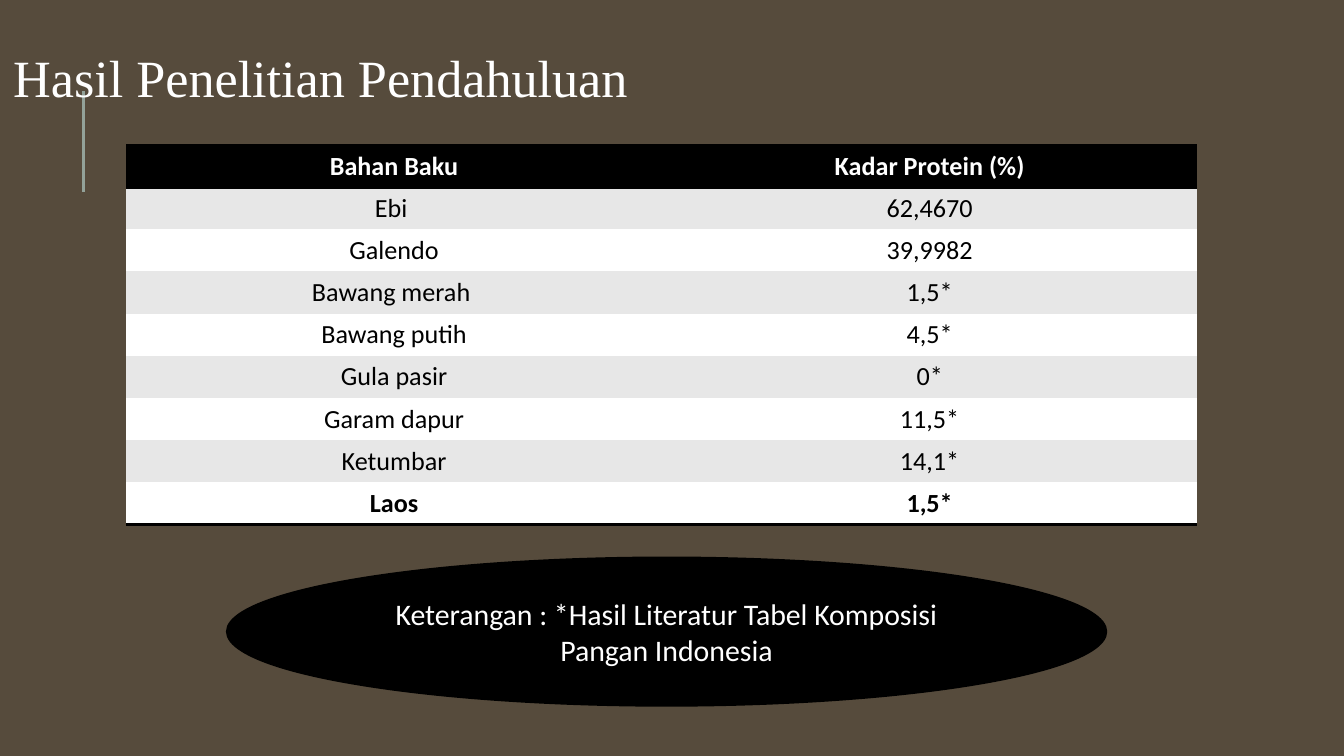
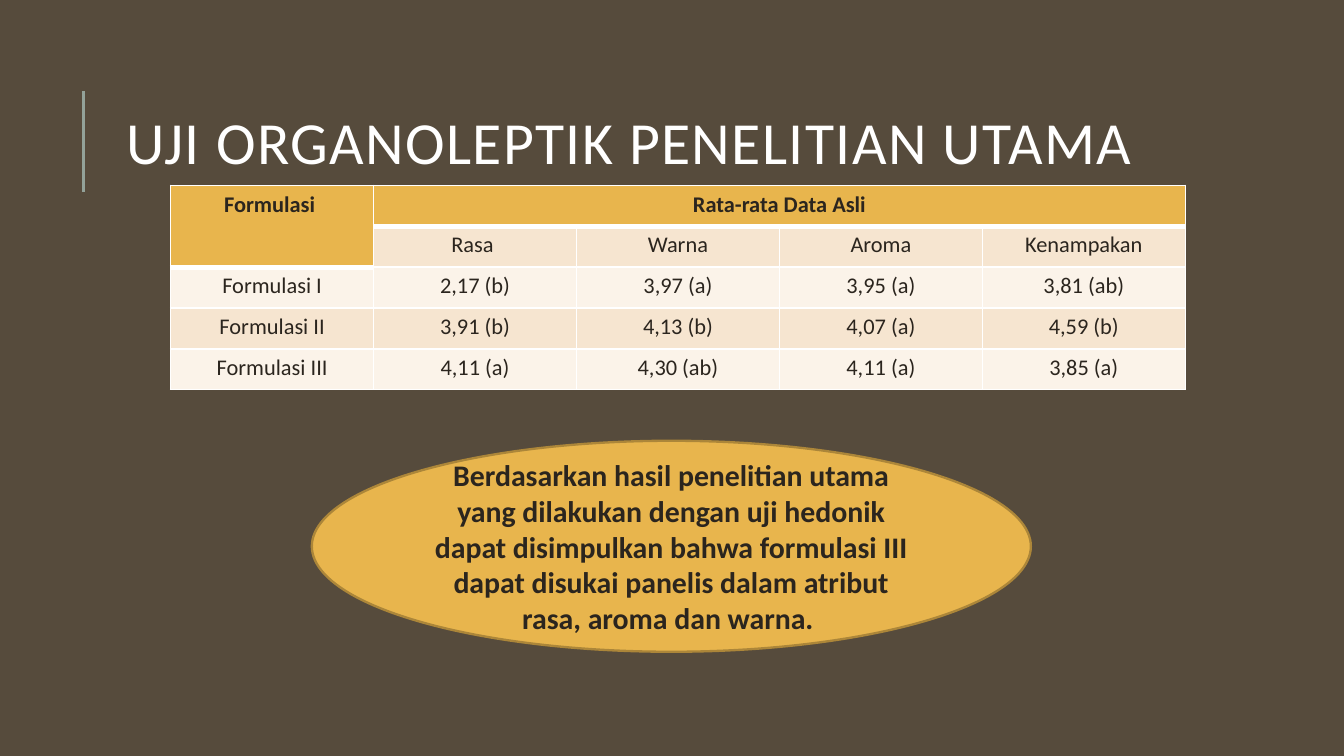
from dataclasses import dataclass

from lxml import etree
from pptx import Presentation
from pptx.dml.color import RGBColor
from pptx.enum.shapes import MSO_CONNECTOR, MSO_SHAPE
from pptx.enum.text import MSO_ANCHOR, PP_ALIGN
from pptx.oxml.ns import qn
from pptx.slide import Slide
from pptx.table import _Cell
from pptx.util import Inches, Pt

STRAIGHT = MSO_CONNECTOR.STRAIGHT
ELLIPSE = MSO_SHAPE.OVAL
CENTER = PP_ALIGN.CENTER
MIDDLE = MSO_ANCHOR.MIDDLE

BACKGROUND, RULE = "564B3C", "93A299"
BLACK, WHITE, GOLD, DARK = "000000", "FFFFFF", "E8B54D", "2B251E"
BODY_FONT = "Calibri"
PLAIN_TABLE_STYLE = "{2D5ABB26-0587-4C30-8999-92F81FD0307C}"

Box = tuple[float, float, float, float]


@dataclass
class TextStyle:
    size: float
    color: str
    bold: bool = False
    font: str = BODY_FONT
    spacing: float = 0


@dataclass
class Title:
    text: str
    box: Box
    style: TextStyle


@dataclass
class TableLook:
    header_fill: str
    bands: tuple[str, str]
    header_text: TextStyle
    body_text: TextStyle
    side_margin: float


@dataclass
class Note:
    text: str
    box: Box
    fill: str
    line: str
    style: TextStyle


PROTEIN_ROWS = [
    ["Bahan Baku", "Kadar Protein (%)"],
    ["Ebi ", "62,4670"],
    ["Galendo", "39,9982"],
    ["Bawang merah ", "1,5*"],
    ["Bawang putih", "4,5*"],
    ["Gula pasir", "0*"],
    ["Garam dapur", "11,5*"],
    ["Ketumbar", "14,1*"],
    ["Laos", "1,5*"],
]
PROTEIN_LOOK = TableLook(BLACK, ("E7E7E7", WHITE), TextStyle(14, WHITE, True),
                         TextStyle(14, BLACK), 0.09)

SCORE_ROWS = [
    ["Formulasi ", "Rata-rata Data Asli", "", "", ""],
    ["", "Rasa ", "Warna", "Aroma", "Kenampakan"],
    ["Formulasi I", "2,17 (b)", "3,97 (a)", "3,95 (a)", "3,81 (ab)"],
    ["Formulasi II", "3,91 (b)", "4,13 (b)", "4,07 (a)", "4,59 (b)"],
    ["Formulasi III", "4,11 (a)", "4,30 (ab)", "4,11 (a)", "3,85 (a)"],
]
SCORE_LOOK = TableLook(GOLD, ("F6E5D0", "FBF3E9"), TextStyle(12, DARK, True),
                       TextStyle(12, DARK), 0.1)

PROTEIN_TITLE = Title("Hasil Penelitian Pendahuluan", (0, 0, 7.97, 1.23),
                      TextStyle(28, WHITE, font="Times New Roman"))
SCORE_TITLE = Title("UJI ORGANOLEPTIK PENELITIAN UTAMA", (0.84, 0.48, 7.97, 1.23),
                    TextStyle(32, WHITE, spacing=0.75))
PROTEIN_NOTE = Note(
    "Keterangan : *Hasil Literatur Tabel Komposisi Pangan Indonesia",
    (1.69, 4.15, 6.54, 1.1), BLACK, BLACK, TextStyle(16, WHITE))
SCORE_NOTE = Note(
    "Berdasarkan hasil penelitian utama yang dilakukan dengan uji hedonik "
    "dapat disimpulkan bahwa formulasi III dapat disukai panelis dalam atribut "
    "rasa, aroma dan warna. ",
    (2.32, 3.28, 5.35, 1.57), GOLD, "AC8639", TextStyle(16, DARK, True))


def rgb(color: str) -> RGBColor:
    return RGBColor.from_string(color)


def place(box: Box) -> list[Inches]:
    return [Inches(length) for length in box]


def write(frame, text: str, style: TextStyle, align=None):
    """Fill a text frame with one styled paragraph and return it."""
    frame.text = text
    para = frame.paragraphs[0]
    para.alignment = align
    for span in para.runs:
        span.font.name = style.font
        span.font.size = Pt(style.size)
        span.font.bold = style.bold
        span.font.color.rgb = rgb(style.color)
        if style.spacing:
            span.font._element.set("spc", str(round(style.spacing * 100)))
    return para


def add_page(deck, title: Title) -> Slide:
    """Add a slide with the shared background, side rule and title."""
    page = deck.slides.add_slide(deck.slide_layouts[6])
    page.background.fill.solid()
    page.background.fill.fore_color.rgb = rgb(BACKGROUND)

    rule = page.shapes.add_connector(STRAIGHT, *place((0.62, 1.43, 0.62, 0.68)))
    rule.line.color.rgb = rgb(RULE)
    rule.line.width = Pt(1.5)
    etree.SubElement(rule._element.spPr, qn("a:effectLst"))

    frame = page.shapes.add_textbox(*place(title.box)).text_frame
    frame.word_wrap = True
    frame.vertical_anchor = MIDDLE
    write(frame, title.text, title.style).line_spacing = 0.8
    return page


def set_border(cell: _Cell, side: str, color: str, width: float) -> None:
    """Draw one cell edge (L, R, T or B, in that order); call before filling."""
    line = etree.SubElement(cell._tc.get_or_add_tcPr(), qn(f"a:ln{side}"),
                            w=str(Pt(width)))
    fill = etree.SubElement(line, qn("a:solidFill"))
    etree.SubElement(fill, qn("a:srgbClr"), val=color)


def fill_cell(cell: _Cell, color: str) -> None:
    cell.fill.solid()
    cell.fill.fore_color.rgb = rgb(color)


def add_table(page: Slide, rows: list[list[str]], box: Box, look: TableLook):
    """Add an even grid with a header row and banded body; fills come later."""
    table = page.shapes.add_table(len(rows), len(rows[0]), *place(box)).table
    table.horz_banding = False
    table._tbl.tblPr.find(qn("a:tableStyleId")).text = PLAIN_TABLE_STYLE
    for index, (row, texts) in enumerate(zip(table.rows, rows)):
        row.height = Inches(box[3] / len(rows))
        style = look.body_text if index else look.header_text
        for cell, text in zip(row.cells, texts):
            cell.margin_left = cell.margin_right = Inches(look.side_margin)
            cell.margin_top = cell.margin_bottom = Inches(0.04)
            if text:
                write(cell.text_frame, text, style, CENTER)
    return table


def band_color(row: int, look: TableLook) -> str:
    return look.bands[(row - 1) % 2] if row else look.header_fill


def add_protein_table(page: Slide) -> None:
    table = add_table(page, PROTEIN_ROWS, (0.94, 1.08, 7.97, 2.77), PROTEIN_LOOK)
    last = len(PROTEIN_ROWS) - 1
    for index, row in enumerate(table.rows):
        for cell in row.cells:
            if index == 0:
                set_border(cell, "T", BLACK, 2)
            if index in (0, last):
                set_border(cell, "B", BLACK, 2)
            fill_cell(cell, band_color(index, PROTEIN_LOOK))
            if index == last:
                cell.text_frame.paragraphs[0].runs[0].font.bold = True


def add_score_table(page: Slide) -> None:
    table = add_table(page, SCORE_ROWS, (1.27, 1.38, 7.55, 1.52), SCORE_LOOK)
    for index, row in enumerate(table.rows):
        for column, cell in enumerate(row.cells):
            is_header = index == 0 or (index, column) == (1, 0)
            for side in "LR":
                set_border(cell, side, WHITE, 1)
            if index == 0:
                set_border(cell, "T", WHITE, 1)
            set_border(cell, "B", WHITE, 3 if is_header else 1)
            fill_cell(cell, band_color(0 if is_header else index, SCORE_LOOK))
    table.cell(0, 0).merge(table.cell(1, 0))
    table.cell(0, 1).merge(table.cell(0, 4))


def add_note(page: Slide, note: Note) -> None:
    shape = page.shapes.add_shape(ELLIPSE, *place(note.box))
    shape.shadow.inherit = False
    shape.fill.solid()
    shape.fill.fore_color.rgb = rgb(note.fill)
    shape.line.color.rgb = rgb(note.line)
    shape.line.width = Pt(1.25)
    shape.text_frame.word_wrap = True
    shape.text_frame.vertical_anchor = MIDDLE
    write(shape.text_frame, note.text, note.style, CENTER)


def main() -> None:
    deck = Presentation()
    deck.slide_width = Inches(10)
    deck.slide_height = Inches(10 * 9 / 16)

    protein_page = add_page(deck, PROTEIN_TITLE)
    add_protein_table(protein_page)
    add_note(protein_page, PROTEIN_NOTE)

    score_page = add_page(deck, SCORE_TITLE)
    add_score_table(score_page)
    add_note(score_page, SCORE_NOTE)

    deck.save("out.pptx")


if __name__ == "__main__":
    main()
